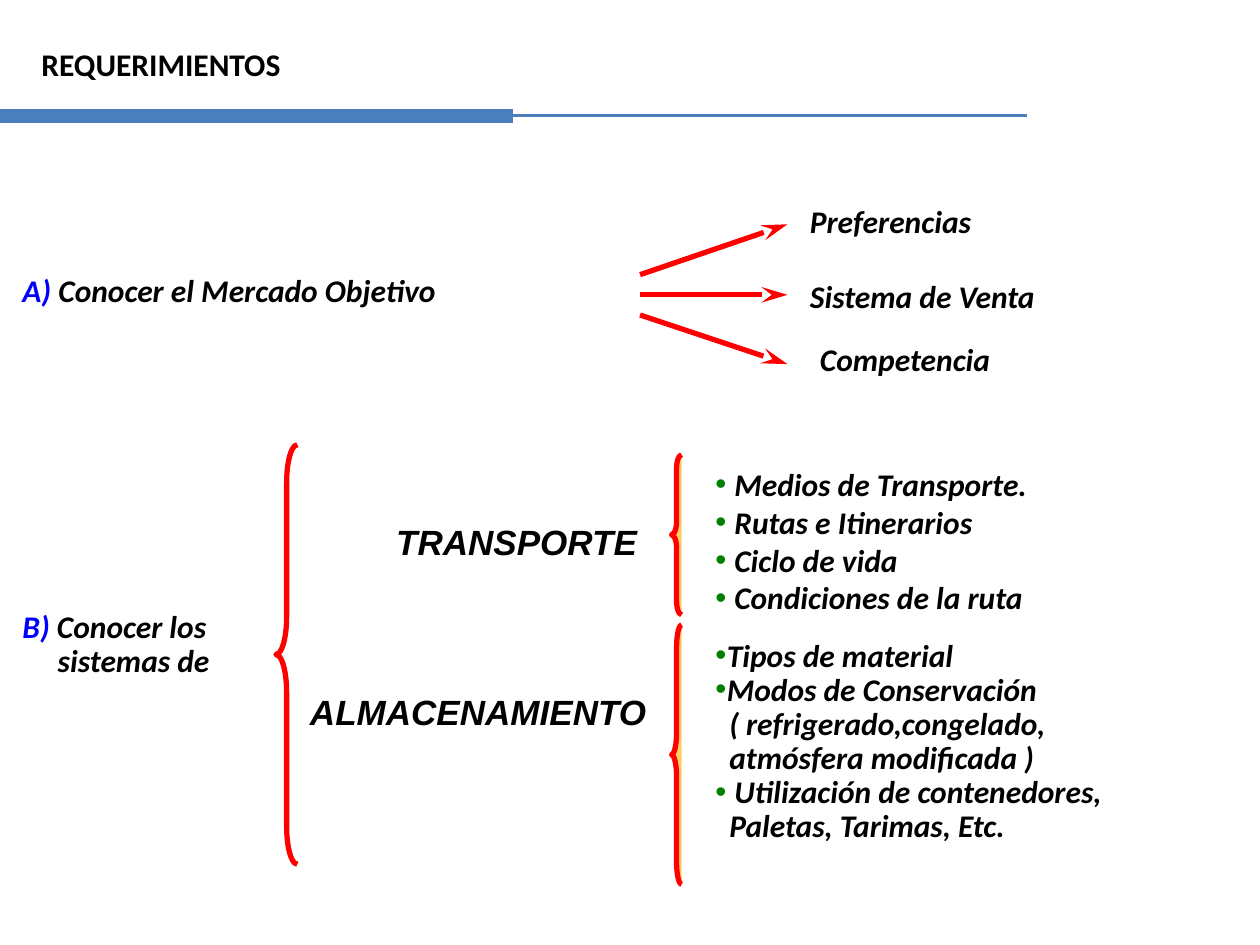
from dataclasses import dataclass

from lxml import etree
from pptx import Presentation
from pptx.dml.color import RGBColor
from pptx.enum.shapes import MSO_CONNECTOR, MSO_SHAPE
from pptx.enum.text import MSO_AUTO_SIZE, PP_ALIGN
from pptx.oxml.ns import qn
from pptx.util import Inches, Pt

STRAIGHT = MSO_CONNECTOR.STRAIGHT
LEFT_BRACE = MSO_SHAPE.LEFT_BRACE
LEFT, CENTER = PP_ALIGN.LEFT, PP_ALIGN.CENTER
FIT_SHAPE = MSO_AUTO_SIZE.SHAPE_TO_FIT_TEXT


@dataclass(frozen=True)
class Theme:
    ink: str = "000000"
    letter: str = "0000FF"
    bullet: str = "008000"
    accent: str = "FF0000"
    brace_fill: str = "FFCC66"
    rule: str = "4B7EBC"
    body_font: str = "Calibri"
    system_font: str = "Arial"
    body_size: int = 18
    system_size: int = 20
    stroke: float = 3


THEME = Theme()


def color(value):
    return RGBColor.from_string(value)


def set_margins(para, margin, bullet):
    """Indent a paragraph; a bulleted one hangs its bullet at the left edge."""
    properties = para._p.get_or_add_pPr()
    properties.set("marL", str(Inches(margin)))
    properties.set("indent", str(Inches(-margin if bullet else 0)))
    if bullet:
        bullet_color = etree.SubElement(properties, qn("a:buClr"))
        etree.SubElement(bullet_color, qn("a:srgbClr"), val=THEME.bullet)
        etree.SubElement(properties, qn("a:buFont"), typeface=THEME.system_font)
        etree.SubElement(properties, qn("a:buChar"), char="•")


def add_text(page, lines, left, top, width, height, *, font=THEME.body_font,
             size=THEME.body_size, italic=True, align=LEFT, spacing=None,
             wrap=True, top_inset=0.05):
    """Each line is (text, margin, bullet, blue lead); a plain string is one line."""
    box = page.shapes.add_textbox(Inches(left), Inches(top), Inches(width), Inches(height))
    frame = box.text_frame
    frame.word_wrap = wrap
    frame.auto_size = FIT_SHAPE
    frame.margin_top = Inches(top_inset)
    if isinstance(lines, str):
        lines = [(lines, 0, False, "")]
    for index, (text, margin, bullet, lead) in enumerate(lines):
        para = frame.add_paragraph() if index else frame.paragraphs[0]
        para.alignment = align
        if spacing:
            para.line_spacing = spacing
        set_margins(para, margin, bullet)
        for content, tint in ((lead, THEME.letter), (text, THEME.ink)):
            if content:
                span = para.add_run()
                span.text = content
                span.font.name = font
                span.font.size = Pt(size)
                span.font.bold = True
                span.font.italic = italic
                span.font.color.rgb = color(tint)
    return box


def add_line(page, start, end, tint, weight, arrow=False):
    points = [Inches(value) for value in (*start, *end)]
    connector = page.shapes.add_connector(STRAIGHT, *points)
    connector.line.color.rgb = color(tint)
    connector.line.width = Pt(weight)
    if arrow:
        etree.SubElement(connector.line._get_or_add_ln(), qn("a:tailEnd"),
                         type="stealth", w="med", len="lg")
    etree.SubElement(connector._element.spPr, qn("a:effectLst"))


def add_brace(page, left, top, width, height, curve, fill=None):
    brace = page.shapes.add_shape(LEFT_BRACE, Inches(left), Inches(top),
                                  Inches(width), Inches(height))
    brace.shadow.inherit = False
    brace.adjustments[0] = curve
    brace.adjustments[1] = 0.5
    if fill:
        brace.fill.solid()
        brace.fill.fore_color.rgb = color(fill)
    else:
        brace.fill.background()
    brace.line.color.rgb = color(THEME.accent)
    brace.line.width = Pt(THEME.stroke)


def add_heading(page):
    for end, weight in ((8.15, 1.75), (4.07, 8)):
        add_line(page, (0, 0.92), (end, 0.92), THEME.rule, weight)
    add_text(page, "REQUERIMIENTOS", 0.23, 0.31, 2.12, 0.4, italic=False, wrap=False)


def add_market(page):
    add_text(page, [("Conocer el Mercado Objetivo", 0, False, "A) ")],
             0.08, 2.1, 4.83, 0.4)
    for start, end in ((2.18, 1.78), (2.34, 2.34), (2.5, 2.89)):
        add_line(page, (5.08, start), (6.25, end), THEME.accent, THEME.stroke, arrow=True)
    for text, left, top, height in (("Preferencias", 6.33, 1.55, 0.48),
                                    ("Sistema de Venta", 6.33, 2.15, 0.4),
                                    ("Competencia", 6.41, 2.65, 0.48)):
        add_text(page, text, left, top, 3.33, height)


def add_systems(page):
    add_text(page, [("Conocer los", 0, False, "B) "), ("sistemas de", 0.28, False, "")],
             0.08, 4.8, 2.67, 0.65, spacing=0.9)
    add_brace(page, 2.19, 3.53, 0.17, 3.33, 1.75)
    add_brace(page, 5.33, 3.61, 0.08, 1.27, 1.33, THEME.brace_fill)
    add_brace(page, 5.33, 4.96, 0.08, 2.06, 2.17, THEME.brace_fill)
    for name, left, top, width in (("TRANSPORTE", 3.04, 4.08, 2.12),
                                   ("ALMACENAMIENTO", 2.27, 5.43, 3.05)):
        add_text(page, name, left, top, width, 0.44, font=THEME.system_font,
                 size=THEME.system_size, align=CENTER)
    transport = ("Medios de Transporte.", "Rutas e Itinerarios",
                 "Ciclo de vida", "Condiciones de la ruta")
    add_text(page, [(text, 0.15, True, "") for text in transport],
             5.58, 3.61, 4.33, 1.35, top_inset=0.08)
    storage = [
        ("Tipos de material", 0.09, True, ""),
        ("Modos de Conservación", 0.09, True, ""),
        ("( refrigerado,congelado,", 0.11, False, ""),
        ("atmósfera modificada )", 0.11, False, ""),
        ("Utilización de contenedores,", 0.15, True, ""),
        ("Paletas, Tarimas, Etc.", 0.11, False, ""),
    ]
    add_text(page, storage, 5.58, 5.03, 4.33, 1.77, spacing=0.9)


def main():
    deck = Presentation()
    deck.slide_width, deck.slide_height = Inches(10), Inches(7.5)
    page = deck.slides.add_slide(deck.slide_layouts[6])
    add_market(page)
    add_systems(page)
    add_heading(page)
    deck.save("out.pptx")


if __name__ == "__main__":
    main()
